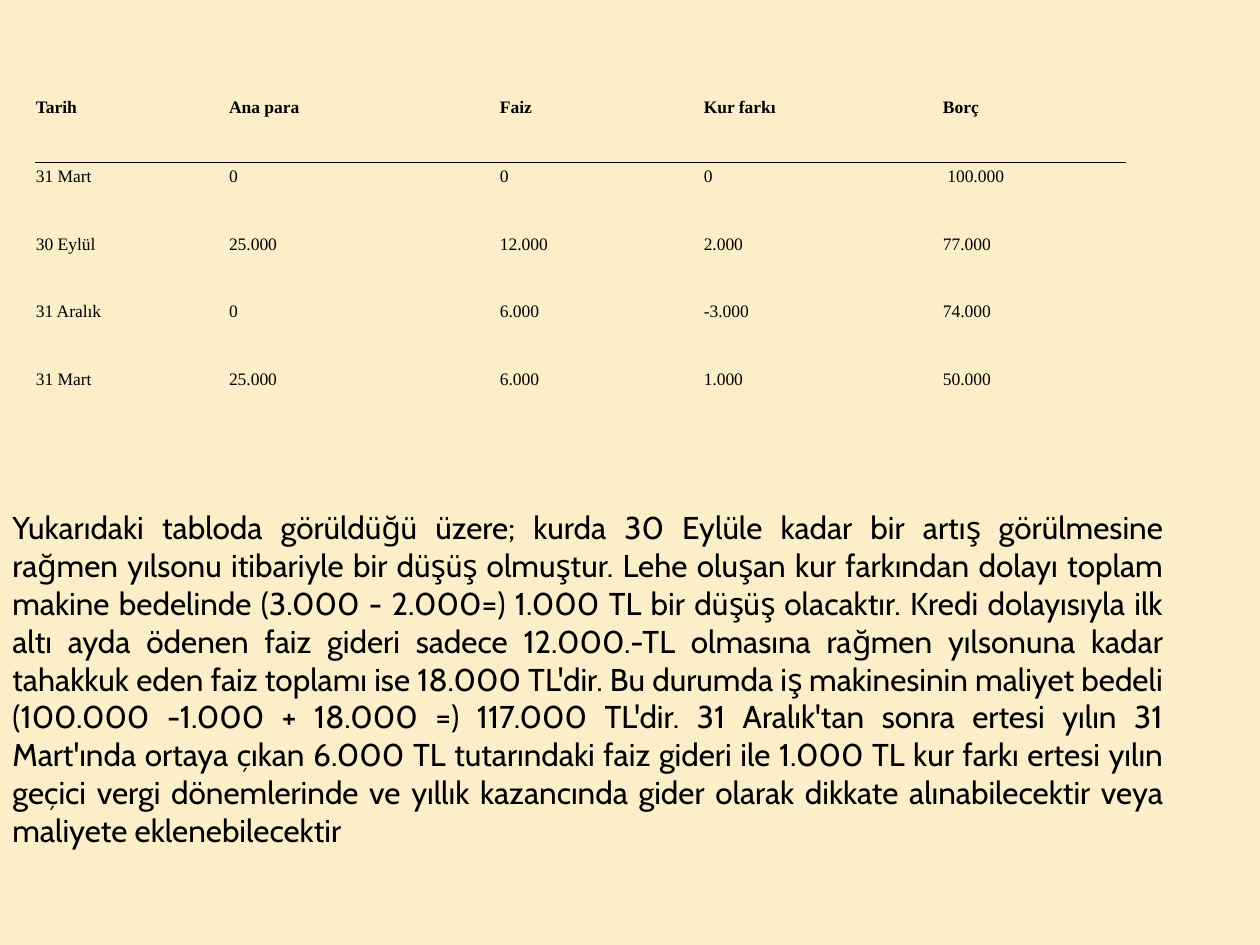
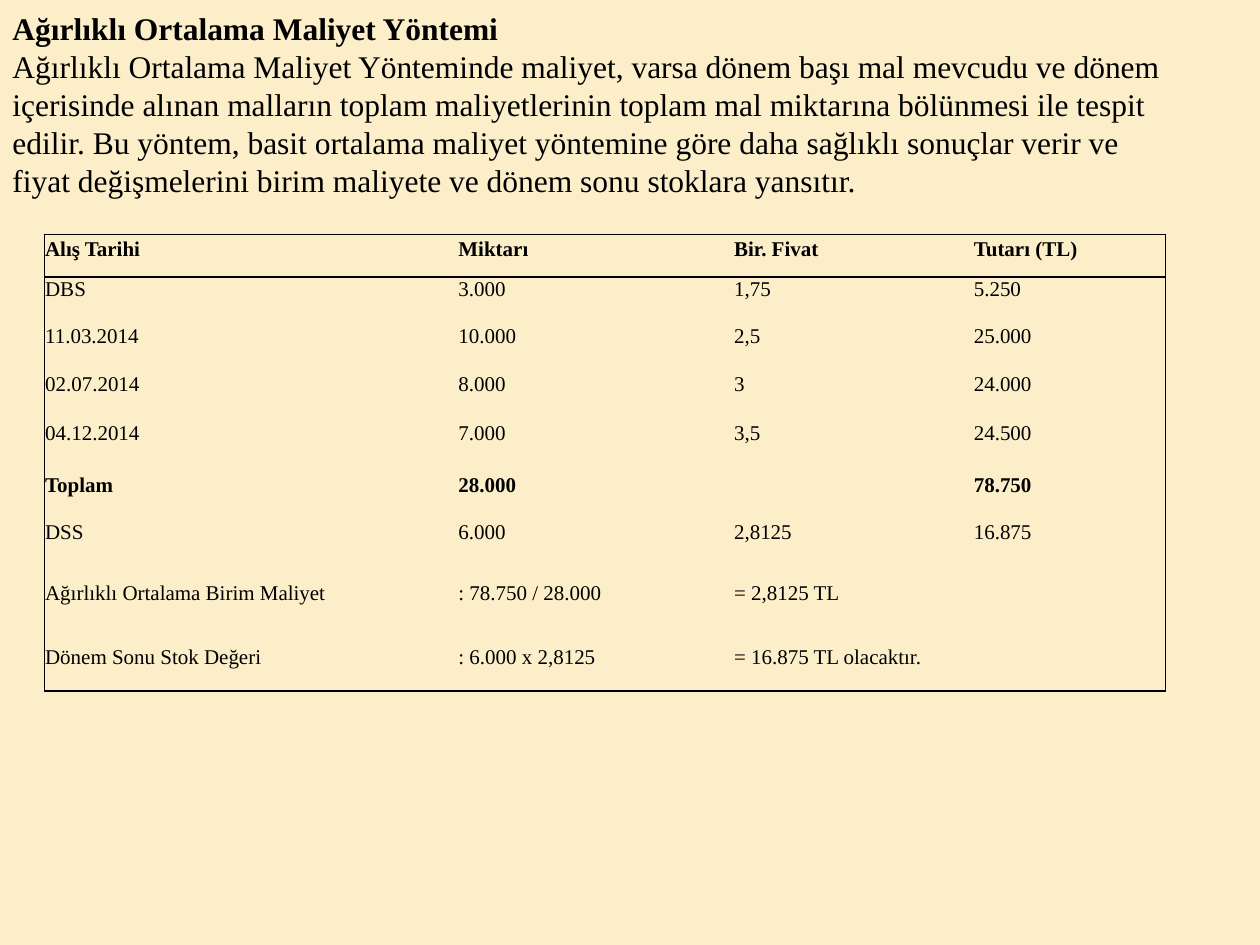
from lxml import etree
from pptx import Presentation
from pptx.dml.color import RGBColor
from pptx.enum.text import PP_ALIGN
from pptx.oxml.ns import qn
from pptx.util import Pt

LEFT, JUSTIFY = PP_ALIGN.LEFT, PP_ALIGN.JUSTIFY
SERIF, SANS = "Times New Roman", "Cabin"
CREAM, BLACK = "FBEEC9", "000000"
BODY_SIZE, BODY_LINE = 18, Pt(21.6)
HEADER_LINE, ROW_LINE = 1.15, Pt(13.7)
SIDES = "LRTB"


def color(hex_value):
    return RGBColor.from_string(hex_value)


def write(paragraph, text, font=SERIF, size=BODY_SIZE, bold=False,
          align=LEFT, line=BODY_LINE, before=0):
    paragraph.alignment = align
    paragraph.line_spacing = line
    paragraph.space_before = Pt(before)
    run = paragraph.add_run()
    run.text = text
    run.font.name = font
    run.font.size = Pt(size)
    run.font.bold = bold
    run.font.color.rgb = color(BLACK)


def set_borders(cell, visible):
    """Draw the sides named in visible and hide the others."""
    properties = cell._tc.get_or_add_tcPr()
    for side in SIDES:
        line = etree.SubElement(properties, qn(f"a:ln{side}"), w=str(Pt(1)))
        if side in visible:
            fill = etree.SubElement(line, qn("a:solidFill"))
            etree.SubElement(fill, qn("a:srgbClr"), val=BLACK)
        else:
            etree.SubElement(line, qn("a:noFill"))


class Deck:
    def __init__(self):
        self.presentation = Presentation()
        self.presentation.slide_width = Pt(720)
        self.presentation.slide_height = Pt(540)
        self.slide = None

    def add_slide(self):
        layout = self.presentation.slide_layouts[6]
        self.slide = self.presentation.slides.add_slide(layout)
        fill = self.slide.background.fill
        fill.solid()
        fill.fore_color.rgb = color(CREAM)

    def text_box(self, left, top, width, height, paragraphs, **style):
        shape = self.slide.shapes.add_textbox(Pt(left), Pt(top), Pt(width), Pt(height))
        frame = shape.text_frame
        frame.word_wrap = True
        for index, (text, bold) in enumerate(paragraphs):
            paragraph = frame.add_paragraph() if index else frame.paragraphs[0]
            write(paragraph, text, bold=bold, **style)

    def table(self, left, top, widths, heights, rows, size, bold_rows=(0,), boxed=False):
        shape = self.slide.shapes.add_table(
            len(rows), len(widths), Pt(left), Pt(top), Pt(sum(widths)), Pt(sum(heights)))
        table = shape.table
        table.first_row = table.horz_banding = False
        for column, width in zip(table.columns, widths):
            column.width = Pt(width)
        for row, height in zip(table.rows, heights):
            row.height = Pt(height)

        last_row, last_column = len(rows) - 1, len(widths) - 1
        for r, texts in enumerate(rows):
            for c, text in enumerate(texts):
                # Rule under the header, and an optional outer frame
                visible = {0: "B", 1: "T"}.get(r, "")
                if boxed:
                    edges = (c == 0, c == last_column, r == 0, r == last_row)
                    visible += "".join(s for s, edge in zip(SIDES, edges) if edge)
                self.cell(table.cell(r, c), text, visible, size, r in bold_rows)
        return table

    def cell(self, cell, text, visible, size, bold):
        set_borders(cell, visible)
        cell.fill.solid()
        cell.fill.fore_color.rgb = color(CREAM)
        cell.margin_left = cell.margin_right = Pt(0.5)
        cell.margin_top = cell.margin_bottom = 0
        if text:
            write(cell.text_frame.paragraphs[0], text, size=size, bold=bold,
                  align=JUSTIFY, line=HEADER_LINE if bold else ROW_LINE, before=6)


def loan_slide(deck):
    deck.add_slide()
    # Explanation below the table
    explanation = (
        "Yukarıdaki tabloda görüldüğü üzere; kurda 30 Eylüle kadar bir artış görülmesine "
        "rağmen yılsonu itibariyle bir düşüş olmuştur. Lehe oluşan kur farkından dolayı "
        "toplam makine bedelinde (3.000 - 2.000=) 1.000 TL bir düşüş olacaktır. Kredi "
        "dolayısıyla ilk altı ayda ödenen faiz gideri sadece 12.000.-TL olmasına rağmen "
        "yılsonuna kadar tahakkuk eden faiz toplamı ise 18.000 TL'dir. Bu durumda iş "
        "makinesinin maliyet bedeli (100.000 -1.000 + 18.000 =) 117.000 TL'dir. 31 "
        "Aralık'tan sonra ertesi yılın 31 Mart'ında ortaya çıkan 6.000 TL tutarındaki faiz "
        "gideri ile 1.000 TL kur farkı ertesi yılın geçici vergi dönemlerinde ve yıllık "
        "kazancında gider olarak dikkate alınabilecektir veya maliyete eklenebilecektir")
    deck.text_box(0, 287, 672, 205, [(explanation, False)], font=SANS, align=JUSTIFY)
    # Loan payments
    payments = [
        ("Tarih", "Ana para", "Faiz", "Kur farkı", "Borç"),
        ("31 Mart", "0", "0", "0", " 100.000"),
        ("30 Eylül", "25.000", "12.000", "2.000", "77.000"),
        ("31 Aralık", "0", "6.000", "-3.000", "74.000"),
        ("31 Mart", "25.000", "6.000", "1.000", "50.000"),
    ]
    deck.table(20, 54.6, [110.4, 154.8, 116.5, 136.7, 105], [38.2] + [38.7] * 4,
               payments, size=10)


def weighted_average_slide(deck):
    deck.add_slide()
    # Heading and definition
    definition = (
        "Ağırlıklı Ortalama Maliyet Yönteminde maliyet, varsa dönem başı mal mevcudu ve "
        "dönem içerisinde alınan malların toplam maliyetlerinin toplam mal miktarına "
        "bölünmesi ile tespit edilir. Bu yöntem, basit ortalama maliyet yöntemine göre daha "
        "sağlıklı sonuçlar verir ve fiyat değişmelerini birim maliyete ve dönem sonu "
        "stoklara yansıtır.")
    deck.text_box(0, 1.8, 677.5, 115.2,
                  [("Ağırlıklı Ortalama Maliyet Yöntemi", True), (definition, False)])
    # Purchases, total and result
    purchases = [
        ("Alış Tarihi", "Miktarı", "Bir. Fivat", "Tutarı (TL)"),
        ("DBS", "3.000", "1,75", "5.250"),
        ("11.03.2014", "10.000", "2,5", "25.000"),
        ("02.07.2014", "8.000", "3", "24.000"),
        ("04.12.2014", "7.000", "3,5", "24.500"),
        ("Toplam", "28.000", "", "78.750"),
        ("DSS", "6.000", "2,8125", "16.875"),
        ("Ağırlıklı Ortalama Birim Maliyet", ": 78.750 / 28.000", "= 2,8125 TL", ""),
        ("Dönem Sonu Stok Değeri", ": 6.000 x 2,8125", "= 16.875 TL olacaktır.", ""),
    ]
    table = deck.table(25.3, 134, [236.2, 157.5, 137, 110],
                       [24.3, 27.2, 27.2, 28, 28, 28.8, 34.5, 36.7, 26.3],
                       purchases, size=12, bold_rows=(0, 5), boxed=True)
    result = table.cell(8, 2)
    result.merge(table.cell(8, 3))
    set_result_edge(result)


def set_result_edge(cell):
    """Give the merged result the right edge of the frame."""
    properties = cell._tc.get_or_add_tcPr()
    for line in [properties.find(qn(f"a:ln{side}")) for side in SIDES]:
        properties.remove(line)
    fill = properties[0]
    set_borders(cell, "RB")
    properties.append(fill)


def main():
    deck = Deck()
    loan_slide(deck)
    weighted_average_slide(deck)
    deck.presentation.save("out.pptx")


if __name__ == "__main__":
    main()
